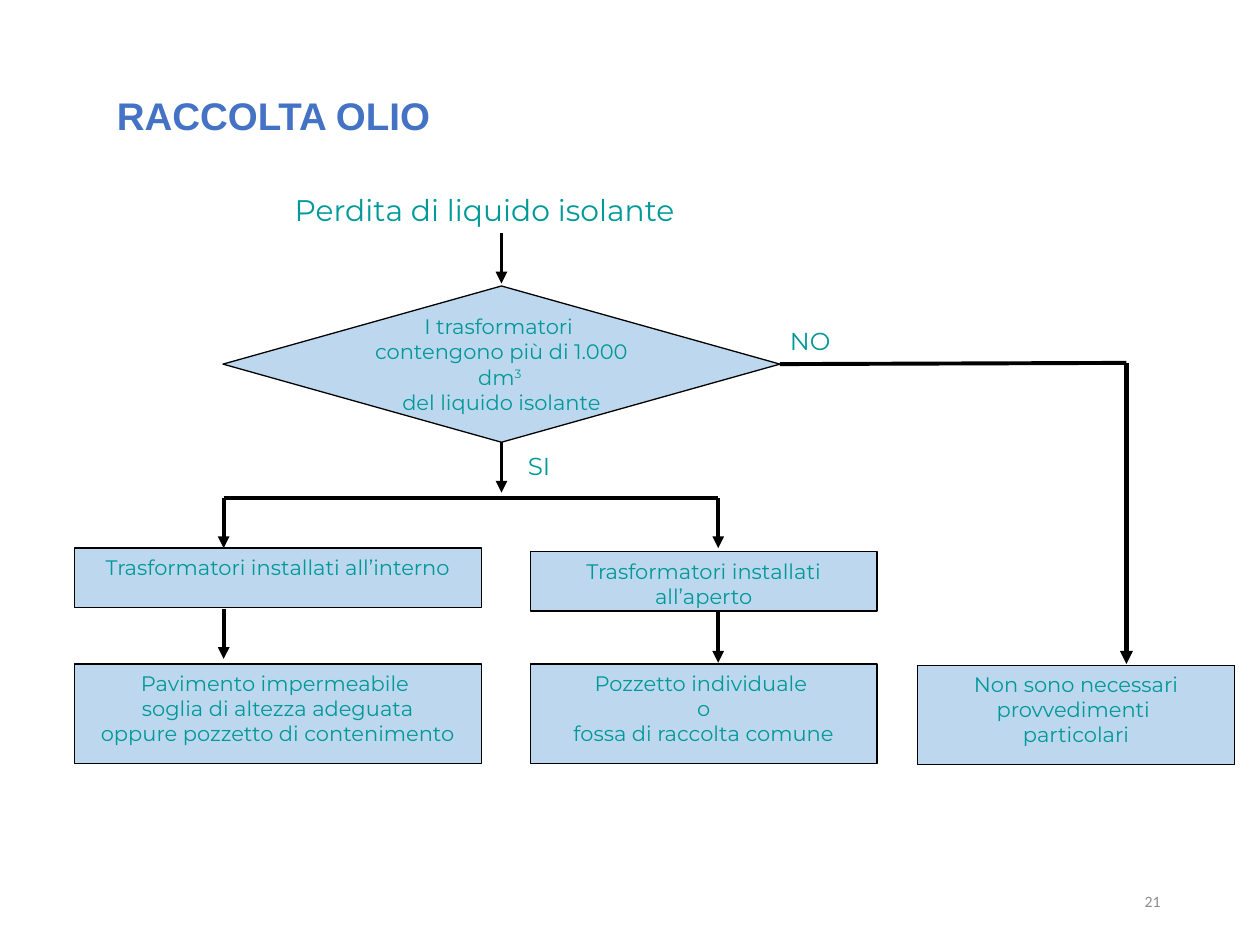
from dataclasses import dataclass

from lxml.etree import SubElement
from pptx import Presentation
from pptx.dml.color import RGBColor
from pptx.enum.shapes import MSO_CONNECTOR, MSO_SHAPE
from pptx.enum.text import MSO_ANCHOR, PP_ALIGN
from pptx.oxml.ns import qn
from pptx.util import Inches, Pt

WIDTH, HEIGHT = Inches(10), Inches(7.5)
COL, ROW = WIDTH / 100, HEIGHT / 75  # grid of 100 columns by 75 rows
ARROW_ROWS = 4

BLUE = RGBColor(0x44, 0x72, 0xC4)
TEAL = RGBColor(0x00, 0x99, 0x99)
PALE_BLUE = RGBColor(0xBD, 0xD7, 0xEE)
BLACK = RGBColor(0x00, 0x00, 0x00)
GREY = RGBColor(0x8C, 0x8C, 0x8C)


@dataclass
class Box:
    """An area of the slide in grid columns and rows."""
    left: float
    top: float
    width: float
    height: float

    @property
    def right(self):
        return self.left + self.width

    @property
    def bottom(self):
        return self.top + self.height

    @property
    def center(self):
        return self.left + self.width / 2

    @property
    def middle(self):
        return self.top + self.height / 2

    def emu(self):
        return (round(self.left * COL), round(self.top * ROW),
                round(self.width * COL), round(self.height * ROW))


def write(frame, lines, size, color=TEAL, font="Montserrat", bold=False,
          align=PP_ALIGN.LEFT, anchor=MSO_ANCHOR.TOP):
    """Write one paragraph per line; a line is a list of (text, superscript)."""
    frame.word_wrap = True
    frame.vertical_anchor = anchor
    for number, line in enumerate(lines):
        paragraph = frame.add_paragraph() if number else frame.paragraphs[0]
        paragraph.alignment = align
        for text, superscript in line:
            run = paragraph.add_run()
            run.text = text
            run.font.size = Pt(size)
            run.font.name = font
            run.font.bold = bold
            run.font.color.rgb = color
            if superscript:
                run.font._element.set("baseline", "30000")


def plain(*texts):
    return [[(text, False)] for text in texts]


def label(slide, box, text, size, **style):
    frame = slide.shapes.add_textbox(*box.emu()).text_frame
    write(frame, plain(text), size, **style)


def node(slide, box, lines, kind=MSO_SHAPE.RECTANGLE, anchor=MSO_ANCHOR.TOP):
    shape = slide.shapes.add_shape(kind, *box.emu())
    shape.shadow.inherit = False
    shape.fill.solid()
    shape.fill.fore_color.rgb = PALE_BLUE
    shape.line.color.rgb = BLACK
    shape.line.width = Pt(0.75)
    write(shape.text_frame, lines, 12, align=PP_ALIGN.CENTER, anchor=anchor)


def link(slide, x1, y1, x2, y2, arrow=False, weight=2.25):
    line = slide.shapes.add_connector(
        MSO_CONNECTOR.STRAIGHT, round(x1 * COL), round(y1 * ROW),
        round(x2 * COL), round(y2 * ROW))
    line.line.color.rgb = BLACK
    line.line.width = Pt(weight)
    if arrow:
        SubElement(line.line._get_or_add_ln(), qn("a:tailEnd"), type="triangle")
    SubElement(line._element.spPr, qn("a:effectLst"))


def down_arrow(slide, x, top):
    link(slide, x, top, x, top + ARROW_ROWS, arrow=True)


def decision(slide, box):
    """The question with its incoming arrow and its SI and NO exits."""
    question = plain("I trasformatori ", "contengono più di 1.000 dm",
                     "del liquido isolante")
    question[1].append(("3 ", True))
    down_arrow(slide, box.center, box.top - 4.2)
    node(slide, box, question, MSO_SHAPE.FLOWCHART_DECISION, MSO_ANCHOR.MIDDLE)
    down_arrow(slide, box.center, box.bottom)
    label(slide, Box(box.center + 1.1, box.bottom + 0.2, 7.9, 3.4), "SI", 14)
    label(slide, Box(box.right - 0.2, box.middle - 3.5, 7.9, 3.4), "NO", 14)


def branch(slide, box, axis, fork_row, place, measures):
    """Where the transformers stand, above the measures that follow."""
    place_box = Box(box.left, box.top, box.width, 4.7)
    measure_box = Box(box.left, box.bottom - 7.9, box.width, 7.9)
    down_arrow(slide, axis, fork_row)
    node(slide, place_box, plain(place))
    down_arrow(slide, axis, place_box.bottom + 0.1)
    node(slide, measure_box, plain(*measures))


def no_action(slide, box, start, axis):
    """The NO route from the start point to its closing box."""
    x, y = start
    link(slide, x, y, axis, y - 0.1)
    link(slide, axis, y - 0.1, axis, box.top - 0.1, arrow=True, weight=2.5)
    node(slide, box, plain("Non sono necessari", "provvedimenti ", "particolari"))


def main():
    deck = Presentation()
    deck.slide_width, deck.slide_height = WIDTH, HEIGHT
    slide = deck.slides.add_slide(deck.slide_layouts[6])

    label(slide, Box(8.3, 6.8, 57.4, 4.7), "RACCOLTA OLIO", 22,
          color=BLUE, font="Arial", bold=True)
    label(slide, Box(22.4, 14.7, 44.9, 3.9), "Perdita di liquido isolante", 17)

    question = Box(17.7, 22.7, 44.2, 12.4)
    decision(slide, question)

    fork_row, indoor_axis, outdoor_axis = 39.5, 17.75, 57
    link(slide, indoor_axis, fork_row, outdoor_axis, fork_row)
    branch(slide, Box(5.9, 43.5, 32.3, 17.1), indoor_axis, fork_row,
           "Trasformatori installati all’interno",
           ["Pavimento impermeabile ", "soglia di altezza adeguata",
            "oppure pozzetto di contenimento"])
    branch(slide, Box(42.1, 43.8, 27.5, 16.8), outdoor_axis, fork_row,
           "Trasformatori installati all’aperto",
           ["Pozzetto individuale ", "o", " fossa di raccolta comune "])
    no_action(slide, Box(72.8, 52.8, 25.2, 7.9),
              (question.right, question.middle), 89.4)

    label(slide, Box(70.6, 69.5, 22.5, 4), "21", 9, color=GREY, font="Calibri",
          align=PP_ALIGN.RIGHT, anchor=MSO_ANCHOR.MIDDLE)
    deck.save("out.pptx")


if __name__ == "__main__":
    main()
